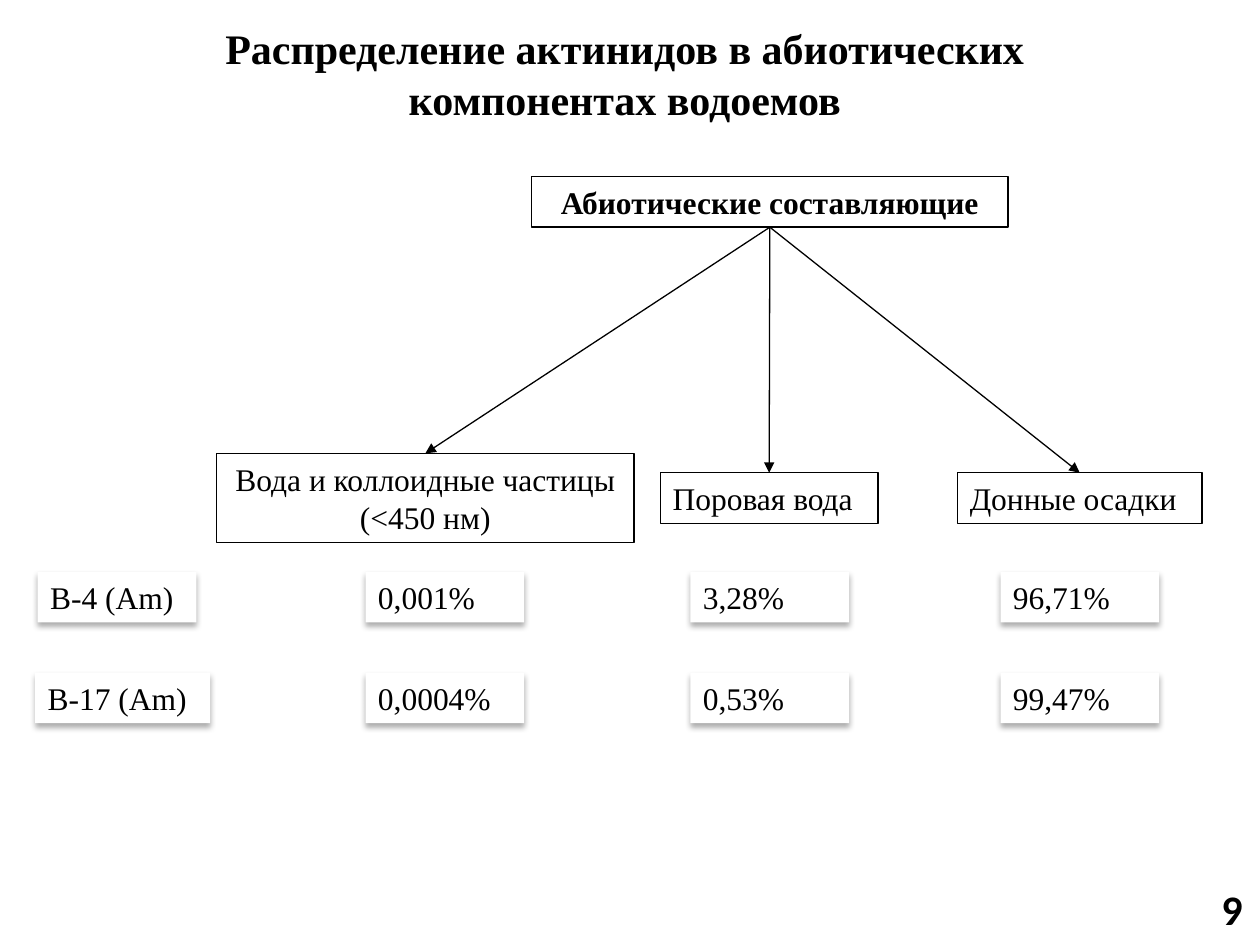
from dataclasses import dataclass

import pptx
import pptx.dml.color
import pptx.enum.shapes
import pptx.enum.text
import pptx.oxml.ns
import pptx.util
from lxml import etree

Cm, Pt = pptx.util.Cm, pptx.util.Pt
RGB = pptx.dml.color.RGBColor
ALIGN = pptx.enum.text.PP_ALIGN
ANCHOR = pptx.enum.text.MSO_ANCHOR
qn = pptx.oxml.ns.qn


@dataclass(frozen=True)
class Theme:
    ink: RGB = RGB(0, 0, 0)
    paper: RGB = RGB(255, 255, 255)
    font: str = "Times New Roman"
    number_font: str = "Calibri"
    heading: Pt = Pt(24)
    body: Pt = Pt(18)
    line: Pt = Pt(0.75)


THEME = Theme()
BOX_H = 1.02


def write(sp, lines, align=ALIGN.LEFT, anchor=ANCHOR.TOP, **font):
    tf = sp.text_frame
    tf.text = "\n".join(lines)
    frame = {"word_wrap": True, "vertical_anchor": anchor,
             "auto_size": pptx.enum.text.MSO_AUTO_SIZE.NONE,
             "margin_left": Cm(0.25), "margin_right": Cm(0.25),
             "margin_top": Cm(0.13), "margin_bottom": Cm(0.13)}
    for key, value in frame.items():
        setattr(tf, key, value)
    style = {"name": THEME.font, "size": THEME.body, "bold": False} | font
    for p in tf.paragraphs:
        p.alignment = align
        p.space_before = Pt(0)
        for r in p.runs:
            for key, value in style.items():
                setattr(r.font, key, value)
            r.font.color.rgb = THEME.ink


def add_rect(slide, box):
    sp = slide.shapes.add_shape(pptx.enum.shapes.MSO_SHAPE.RECTANGLE, *map(Cm, box))
    sp.shadow.inherit = False
    return sp


def add_node(slide, box, lines, **text):
    sp = add_rect(slide, box)
    sp.fill.background()
    sp.line.color.rgb = THEME.ink
    sp.line.width = THEME.line
    write(sp, lines, **text)
    return sp


def add_card(slide, box, text):
    """Place a white box with a soft shadow below it."""
    sp = add_rect(slide, box)
    sp.fill.solid()
    sp.fill.fore_color.rgb = THEME.paper
    sp.line.fill.background()
    effects = sp._element.spPr.find(qn("a:effectLst"))
    shadow = etree.SubElement(effects, qn("a:outerShdw"), blurRad=str(Pt(3.5)),
                              dist=str(Pt(2.2)), dir="5400000", rotWithShape="0")
    color = etree.SubElement(shadow, qn("a:srgbClr"), val=str(THEME.ink))
    etree.SubElement(color, qn("a:alpha"), val="32000")
    write(sp, [text])


def add_arrow(slide, parent, child):
    """Join the bottom of parent to the top of child."""
    line = slide.shapes.add_connector(pptx.enum.shapes.MSO_CONNECTOR.STRAIGHT, 0, 0, 0, 0)
    line.begin_connect(parent, 2)
    line.end_connect(child, 0)
    line.line.color.rgb = THEME.ink
    line.line.width = THEME.line
    sp_pr = line._element.spPr
    etree.SubElement(sp_pr.find(qn("a:ln")), qn("a:tailEnd"), type="triangle")
    etree.SubElement(sp_pr, qn("a:effectLst"))


def add_title(slide, box, text):
    sp = slide.shapes.title
    sp.left, sp.top, sp.width, sp.height = map(Cm, box)
    write(sp, [text], align=ALIGN.CENTER, size=THEME.heading, bold=True)


def add_tree(slide, box):
    x, y, _, h = box
    root = add_node(slide, (x + 6.35, y, 9.6, BOX_H), ["Абиотические составляющие"],
                    align=ALIGN.CENTER, bold=True)
    leaves = [
        (0, 8.41, 1.8, ["Вода и коллоидные частицы", "(<450 нм)"], ALIGN.CENTER),
        (8.94, 4.39, BOX_H, ["Поровая вода"], ALIGN.LEFT),
        (14.93, 4.93, BOX_H, ["Донные осадки"], ALIGN.LEFT),
    ]
    middle = y + h - 0.9
    for dx, width, height, lines, align in leaves:
        leaf = add_node(slide, (x + dx, middle - height / 2, width, height), lines, align=align)
        add_arrow(slide, root, leaf)


def add_values(slide, box):
    x, y, _, h = box
    columns = [6.66, 13.21, 19.46]
    rows = [
        ("В-4 (Am)", 0.05, 3.2, ["0,001%", "3,28%", "96,71%"]),
        ("В-17 (Am)", 0, 3.53, ["0,0004%", "0,53%", "99,47%"]),
    ]
    pitch = (h - BOX_H) / (len(rows) - 1)
    for i, (label, dx, width, values) in enumerate(rows):
        top = y + i * pitch
        add_card(slide, (x + dx, top, width, BOX_H), label)
        for column, value in zip(columns, values):
            add_card(slide, (x + column, top, 3.2, BOX_H), value)


def add_page_number(slide, box, number):
    sp = slide.shapes.add_textbox(*map(Cm, box))
    write(sp, [number], align=ALIGN.RIGHT, anchor=ANCHOR.MIDDLE,
          name=THEME.number_font, size=THEME.heading, bold=True)


def main():
    prs = pptx.Presentation()
    prs.slide_width, prs.slide_height = Cm(25.4), Cm(19.05)
    slide = prs.slides.add_slide(prs.slide_layouts.get_by_name("Title Only"))
    add_title(slide, (2.08, 0.33, 21.03, 2.31),
              "Распределение актинидов в абиотических компонентах водоемов")
    add_tree(slide, (4.37, 3.56, 19.86, 7.38))
    add_values(slide, (0.71, 11.53, 22.66, 3.05))
    add_page_number(slide, (19.38, 17.81, 5.92, BOX_H), "9")
    prs.save("out.pptx")


if __name__ == "__main__":
    main()
